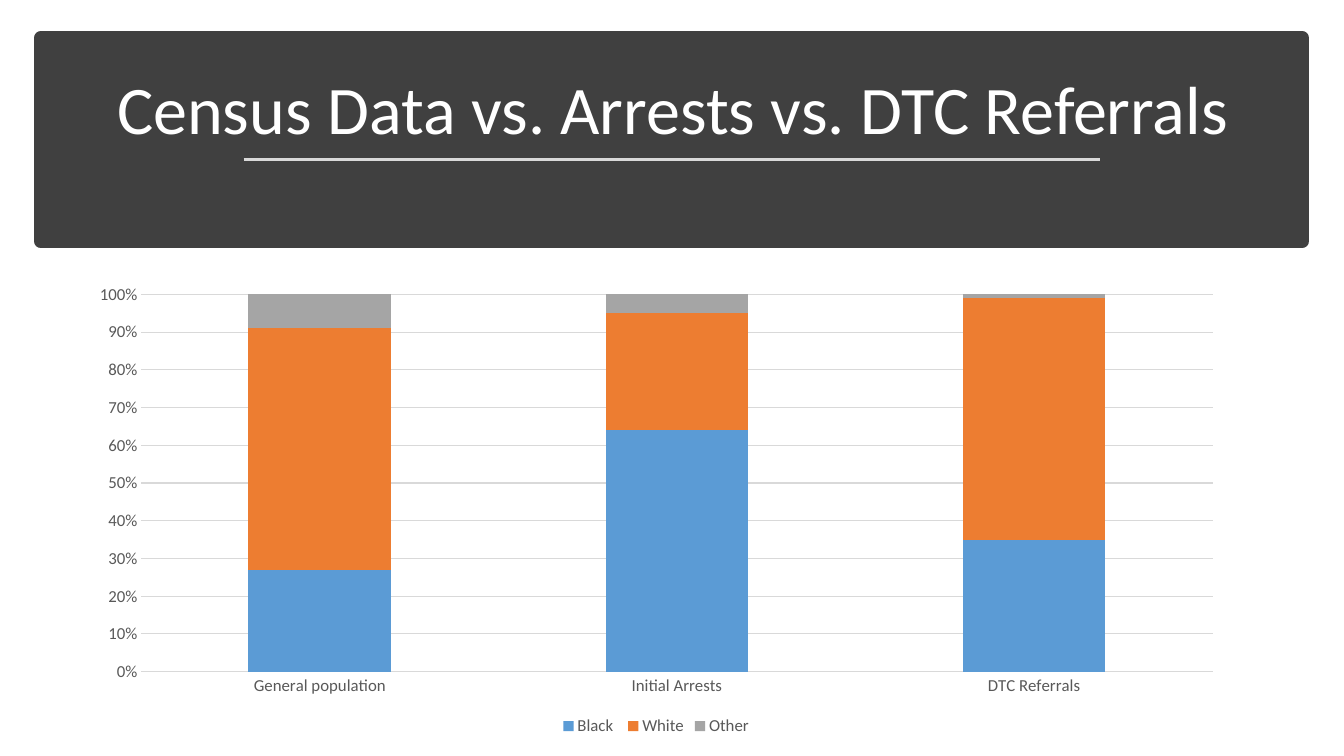
from typing import NamedTuple

from lxml import etree
from pptx import Presentation
from pptx.chart.data import CategoryChartData
from pptx.dml.color import RGBColor
from pptx.enum.chart import XL_CHART_TYPE, XL_LEGEND_POSITION, XL_TICK_MARK
from pptx.enum.shapes import MSO_CONNECTOR, MSO_SHAPE
from pptx.enum.text import MSO_ANCHOR, MSO_AUTO_SIZE, PP_ALIGN
from pptx.oxml.ns import qn
from pptx.util import Pt

STACKED_100 = XL_CHART_TYPE.COLUMN_STACKED_100
LEGEND_BOTTOM = XL_LEGEND_POSITION.BOTTOM
NO_TICK = XL_TICK_MARK.NONE
STRAIGHT = MSO_CONNECTOR.STRAIGHT
RECTANGLE = MSO_SHAPE.RECTANGLE
BOTTOM = MSO_ANCHOR.BOTTOM
NO_AUTOFIT = MSO_AUTO_SIZE.NONE
CENTER = PP_ALIGN.CENTER

EMU_PER_PX = 9525
TITLE_ONLY = 5
FONT = "Calibri"
BAND_COLOR = "404040"
RULE_COLOR = "D9D9D9"
LABEL_COLOR = "595959"
TITLE_COLOR = "FFFFFF"


class Box(NamedTuple):
    left: int
    top: int
    width: int
    height: int

    def emu(self) -> list[int]:
        return [px(length) for length in self]


class Group(NamedTuple):
    name: str
    shares: tuple[int, ...]
    color: str


SLIDE_WIDTH, SLIDE_HEIGHT = 1280, 720
BAND = Box(39, 36, 1201, 194)
TITLE = Box(56, 49, 1169, 98)
RULE = Box(232, 152, 816, 0)
CHART = Box(73, 262, 1104, 443)

STAGES = ("General population", "Initial Arrests", "DTC Referrals")
GROUPS = (
    Group("Black ", (27, 64, 35), "5B9BD5"),
    Group("White", (64, 31, 64), "ED7D31"),
    Group("Other", (9, 5, 1), "A5A5A5"),
)


def px(length: int) -> int:
    return length * EMU_PER_PX


def rgb(color: str) -> RGBColor:
    return RGBColor.from_string(color)


def style_font(font, size: float, color: str) -> None:
    font.name = FONT
    font.size = Pt(size)
    font.color.rgb = rgb(color)


def paint(fill, color: str) -> None:
    fill.solid()
    fill.fore_color.rgb = rgb(color)


def style_line(line, color: str, width: float) -> None:
    paint(line.fill, color)
    line.width = Pt(width)


def add_band(slide) -> None:
    band = slide.shapes.add_shape(RECTANGLE, *BAND.emu())
    band.shadow.inherit = False
    paint(band.fill, BAND_COLOR)
    style_line(band.line, BAND_COLOR, 10)


def place_title(slide, wording: str) -> None:
    title = slide.shapes.title
    title.left, title.top, title.width, title.height = TITLE.emu()
    frame = title.text_frame
    frame.text = wording
    frame.auto_size = NO_AUTOFIT
    frame.word_wrap = True
    frame.vertical_anchor = BOTTOM
    paragraph = frame.paragraphs[0]
    paragraph.alignment = CENTER
    paragraph.line_spacing = 0.9
    style_font(paragraph.runs[0].font, 48.6, TITLE_COLOR)
    title.element.getparent().append(title.element)


def add_rule(slide) -> None:
    left, top, width, height = RULE.emu()
    rule = slide.shapes.add_connector(STRAIGHT, left, top, left + width, top + height)
    style_line(rule.line, RULE_COLOR, 1.75)
    etree.SubElement(rule.element.spPr, qn("a:effectLst"))


def add_shares_chart(slide) -> None:
    shares = CategoryChartData()
    shares.categories = STAGES
    for group in GROUPS:
        shares.add_series(group.name, group.shares)
    chart = slide.shapes.add_chart(STACKED_100, *CHART.emu(), shares).chart
    chart.has_title = False
    style_font(chart.font, 10, "000000")

    plot = chart.plots[0]
    plot.gap_width = 150
    plot.overlap = 100
    plot.vary_by_categories = False
    for series, group in zip(plot.series, GROUPS):
        paint(series.format.fill, group.color)

    for axis in (chart.category_axis, chart.value_axis):
        axis.major_tick_mark = NO_TICK
        axis.minor_tick_mark = NO_TICK
        axis.format.line.fill.background()
        style_font(axis.tick_labels.font, 12, LABEL_COLOR)

    percent = chart.value_axis
    percent.has_major_gridlines = True
    style_line(percent.major_gridlines.format.line, RULE_COLOR, 0.75)
    percent.tick_labels.number_format = "0%"
    percent.tick_labels.number_format_is_linked = False

    chart.has_legend = True
    chart.legend.position = LEGEND_BOTTOM
    chart.legend.include_in_layout = False
    style_font(chart.legend.font, 12, LABEL_COLOR)


def main() -> None:
    deck = Presentation()
    deck.slide_width, deck.slide_height = px(SLIDE_WIDTH), px(SLIDE_HEIGHT)
    slide = deck.slides.add_slide(deck.slide_layouts[TITLE_ONLY])
    add_band(slide)
    place_title(slide, "Census Data vs. Arrests vs. DTC Referrals")
    add_rule(slide)
    add_shares_chart(slide)
    deck.save("out.pptx")


if __name__ == "__main__":
    main()
